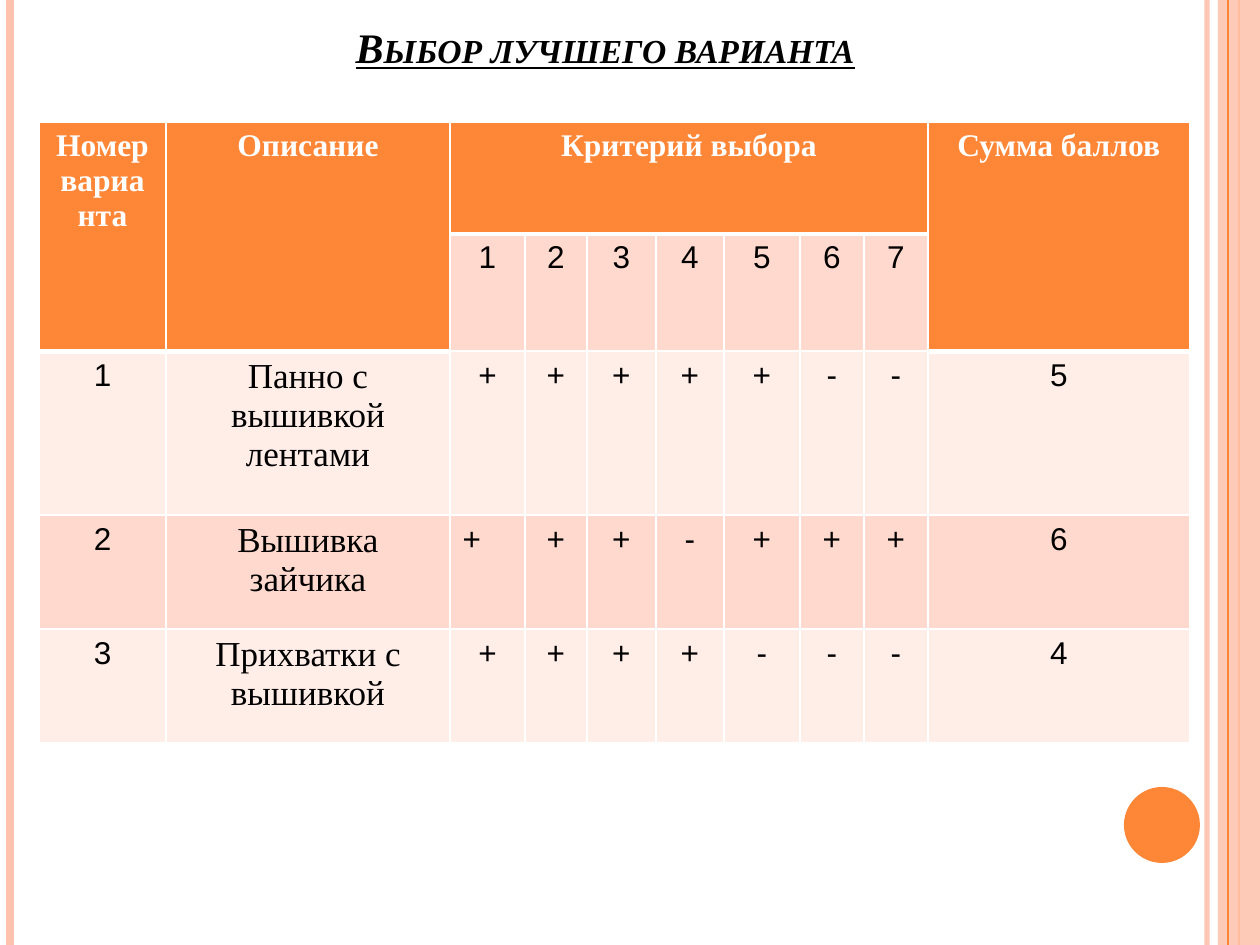
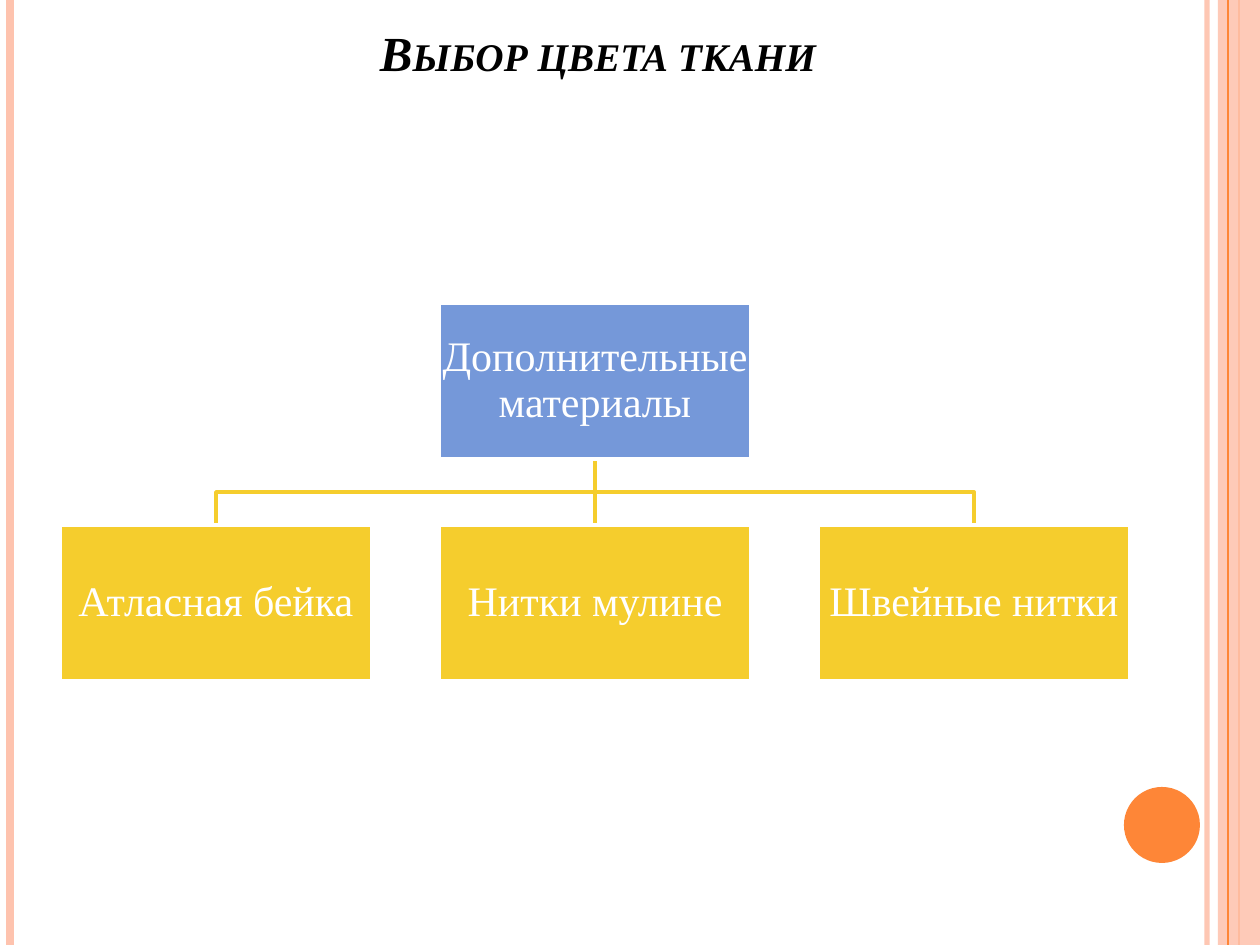
from dataclasses import dataclass

from lxml.etree import SubElement
from pptx import Presentation
from pptx.dml.color import RGBColor
from pptx.enum.shapes import MSO_CONNECTOR, MSO_SHAPE
from pptx.enum.text import MSO_ANCHOR, MSO_AUTO_SIZE, PP_ALIGN
from pptx.oxml.ns import qn
from pptx.util import Emu, Pt


@dataclass(frozen=True)
class Theme:
    orange: str = "FE8637"
    peach: str = "FEC3AE"
    band_dark: str = "FFD9CE"
    band_light: str = "FFEDE8"
    blue: str = "7598D9"
    yellow: str = "F5CD2D"
    white: str = "FFFFFF"
    black: str = "000000"
    serif: str = "Times New Roman"
    sans: str = "Arial"
    cell_size: int = 18
    description_size: int = 20
    box_size: int = 24
    grid_line: int = 1
    header_line: int = 3
    tree_line: int = 2


THEME = Theme()
EMU_PER_PX = 914400 / 126
SLIDE_WIDTH, SLIDE_HEIGHT = 1260, 945

# Shared decoration: x, colour, weight in points, opacity in percent
SIDE_LINES = [
    (1207, THEME.peach, 3, 93),
    (10, THEME.peach, 4.5, 100),
    (1239, THEME.orange, 1.5, 100),
]
SIDE_BAND = (1218, 0, 42, SLIDE_HEIGHT)
SIDE_BAND_OPACITY = 87
BAND_LINE = (1228, THEME.orange, 0.75, 100)
CORNER_DISC = (1124, 787, 76, 76)

# Slide 1: choice of the best option
OPTIONS_TITLE = {"text": "Выбор лучшего варианта", "box": (118, 29, 974, 49),
                 "size": 24, "underline": True}
HEADINGS = {0: "Номер варианта", 1: "Описание", 2: "Критерий выбора", 9: "Сумма баллов"}
CRITERIA = range(1, 8)
OPTIONS = [
    ("1", "Панно с вышивкой лентами", "+++++--", "5"),
    ("2", "Вышивка зайчика", "+++-+++", "6"),
    ("3", "Прихватки с вышивкой", "++++---", "4"),
]
TABLE_LEFT, TABLE_TOP = 39, 122
COLUMN_WIDTHS = [127, 284, 75, 62, 69, 68, 76, 64, 64, 262]
ROW_HEIGHTS = [112, 73, 164, 114, 114]
TALL_HEADINGS = (0, 1, 9)
FIRST_CRITERION, LAST_CRITERION = 2, 8
LEFT_ALIGNED_MARK = (3, 2)

# Slide 2: additional materials
FABRIC_TITLE = {"text": "Выбор цвета ткани", "box": (108, 29, 980, 59),
                "size": 28, "underline": False}
ROOT = "Дополнительные материалы"
MATERIALS = ["Атласная бейка", "Нитки мулине", "Швейные нитки"]
BOX_WIDTH, BOX_HEIGHT, BOX_GAP = 312, 156, 67
TREE_LEFT, ROOT_TOP, MATERIAL_TOP = 60, 303, 525
BOX_INSET = 2


def px(length):
    return Emu(round(length * EMU_PER_PX))


def place(box):
    return [px(length) for length in box]


def rgb(colour):
    return RGBColor.from_string(colour)


def set_opacity(part, percent):
    for colour in part.element.spPr.iter(qn("a:srgbClr")):
        SubElement(colour, qn("a:alpha"), val=str(percent * 1000))


def add_line(shapes, start, end, colour, weight):
    line = shapes.add_connector(MSO_CONNECTOR.STRAIGHT, *place(start + end))
    line.line.color.rgb = rgb(colour)
    line.line.width = Pt(weight)
    SubElement(line.element.spPr, qn("a:effectLst"))
    return line


def add_block(shapes, preset, box, colour):
    block = shapes.add_shape(preset, *place(box))
    block.shadow.inherit = False
    block.fill.solid()
    block.fill.fore_color.rgb = rgb(colour)
    block.line.fill.background()
    return block


def style_text(paragraph, font_name, size, colour, bold=False, align=PP_ALIGN.CENTER):
    paragraph.alignment = align
    for run in paragraph.runs:
        run.font.name = font_name
        run.font.size = Pt(size)
        run.font.bold = bold
        run.font.color.rgb = rgb(colour)


def decorate_master(master, slide):
    """Draw the side lines, band and disc, then move them to the master."""
    def add_side_line(x, colour, weight, opacity):
        line = add_line(slide.shapes, (x, 0), (x, SLIDE_HEIGHT), colour, weight)
        if opacity < 100:
            set_opacity(line, opacity)
        return line

    decoration = [add_side_line(*side_line) for side_line in SIDE_LINES]
    band = add_block(slide.shapes, MSO_SHAPE.RECTANGLE, SIDE_BAND, THEME.peach)
    set_opacity(band, SIDE_BAND_OPACITY)
    decoration += [band, add_side_line(*BAND_LINE),
                   add_block(slide.shapes, MSO_SHAPE.OVAL, CORNER_DISC, THEME.orange)]
    first_id = max(shape.shape_id for shape in master.shapes) + 1
    for number, part in enumerate(decoration, first_id):
        part.element.xpath("./*/p:cNvPr")[0].set("id", str(number))
        master.shapes.element.append(part.element)


def set_title(slide, content):
    title = slide.shapes.title
    title.left, title.top, title.width, title.height = place(content["box"])
    frame = title.text_frame
    frame.text = content["text"]
    frame.auto_size = MSO_AUTO_SIZE.NONE
    frame.vertical_anchor = MSO_ANCHOR.BOTTOM
    heading = frame.paragraphs[0]
    style_text(heading, THEME.serif, content["size"], THEME.black, bold=True)
    for run in heading.runs:
        run.font.italic = True
        run.font.underline = content["underline"]
        run.font._element.set("cap", "small")


def is_heading(row, column):
    return row == 0 or (row == 1 and column in TALL_HEADINGS)


def set_borders(cell, row, column):
    bottom = THEME.header_line if is_heading(row, column) else THEME.grid_line
    top = THEME.grid_line
    if row and is_heading(row - 1, column) and not is_heading(row, column):
        top = THEME.header_line
    properties = cell._tc.get_or_add_tcPr()
    weights = {"lnL": THEME.grid_line, "lnR": THEME.grid_line, "lnT": top, "lnB": bottom}
    for side, weight in weights.items():
        border = SubElement(properties, qn(f"a:{side}"), w=str(Pt(weight)))
        fill = SubElement(border, qn("a:solidFill"))
        SubElement(fill, qn("a:srgbClr"), val=THEME.white)


def fill_cell(cell, row, column, text):
    heading = is_heading(row, column)
    set_borders(cell, row, column)
    band = THEME.band_dark if row % 2 else THEME.band_light
    cell.fill.solid()
    cell.fill.fore_color.rgb = rgb(THEME.orange if heading else band)
    if not text:
        return
    cell.text_frame.text = text
    words = cell.text_frame.paragraphs[0]
    if heading:
        style_text(words, THEME.serif, THEME.cell_size, THEME.white, bold=True)
    elif column == 1:
        style_text(words, THEME.serif, THEME.description_size, THEME.black)
    else:
        align = PP_ALIGN.LEFT if (row, column) == LEFT_ALIGNED_MARK else PP_ALIGN.CENTER
        style_text(words, THEME.sans, THEME.cell_size, THEME.black, align=align)


def build_options(slide):
    set_title(slide, OPTIONS_TITLE)
    rows = [[HEADINGS.get(column, "") for column in range(len(COLUMN_WIDTHS))],
            ["", "", *map(str, CRITERIA), ""]]
    rows += [[number, description, *marks, total]
             for number, description, marks, total in OPTIONS]
    box = (TABLE_LEFT, TABLE_TOP, sum(COLUMN_WIDTHS), sum(ROW_HEIGHTS))
    table = slide.shapes.add_table(len(rows), len(COLUMN_WIDTHS), *place(box)).table
    table.first_row = table.horz_banding = False
    for column, width in zip(table.columns, COLUMN_WIDTHS):
        column.width = px(width)
    for row, height in zip(table.rows, ROW_HEIGHTS):
        row.height = px(height)
    for column in TALL_HEADINGS:
        table.cell(0, column).merge(table.cell(1, column))
    table.cell(0, FIRST_CRITERION).merge(table.cell(0, LAST_CRITERION))
    for row, texts in enumerate(rows):
        for column, text in enumerate(texts):
            fill_cell(table.cell(row, column), row, column, text)


def add_tree_box(shapes, left, top, label, colour):
    box = add_block(shapes, MSO_SHAPE.RECTANGLE, (left, top, BOX_WIDTH, BOX_HEIGHT), colour)
    box.line.color.rgb = rgb(THEME.white)
    box.line.width = Pt(THEME.tree_line)
    frame = box.text_frame
    frame.word_wrap = True
    frame.vertical_anchor = MSO_ANCHOR.MIDDLE
    frame.margin_left = frame.margin_right = px(BOX_INSET)
    frame.margin_top = frame.margin_bottom = px(BOX_INSET)
    frame.text = label
    style_text(frame.paragraphs[0], THEME.serif, THEME.box_size, THEME.white)
    frame.paragraphs[0].line_spacing = 0.9


def add_branch(shapes, root_x, material_x):
    start_y = ROOT_TOP + BOX_HEIGHT
    if material_x == root_x:
        add_line(shapes, (root_x, start_y), (root_x, MATERIAL_TOP),
                 THEME.yellow, THEME.tree_line)
        return
    bend_y = (start_y + MATERIAL_TOP) // 2
    outline = shapes.build_freeform(root_x, start_y, scale=EMU_PER_PX)
    outline.add_line_segments(
        [(root_x, bend_y), (material_x, bend_y), (material_x, MATERIAL_TOP)], close=False)
    branch = outline.convert_to_shape()
    branch.shadow.inherit = False
    branch.fill.background()
    branch.line.color.rgb = rgb(THEME.yellow)
    branch.line.width = Pt(THEME.tree_line)


def build_materials(slide):
    set_title(slide, FABRIC_TITLE)
    lefts = [TREE_LEFT + i * (BOX_WIDTH + BOX_GAP) for i in range(len(MATERIALS))]
    root_left = (lefts[0] + lefts[-1]) // 2
    # Branches go behind the boxes
    for left in lefts:
        add_branch(slide.shapes, root_left + BOX_WIDTH // 2, left + BOX_WIDTH // 2)
    add_tree_box(slide.shapes, root_left, ROOT_TOP, ROOT, THEME.blue)
    for left, material in zip(lefts, MATERIALS):
        add_tree_box(slide.shapes, left, MATERIAL_TOP, material, THEME.yellow)


def main():
    deck = Presentation()
    deck.slide_width, deck.slide_height = px(SLIDE_WIDTH), px(SLIDE_HEIGHT)
    title_only = deck.slide_layouts.get_by_name("Title Only")
    options_slide, materials_slide = [deck.slides.add_slide(title_only) for _ in range(2)]
    decorate_master(deck.slide_master, options_slide)
    build_options(options_slide)
    build_materials(materials_slide)
    deck.save("out.pptx")


if __name__ == "__main__":
    main()
